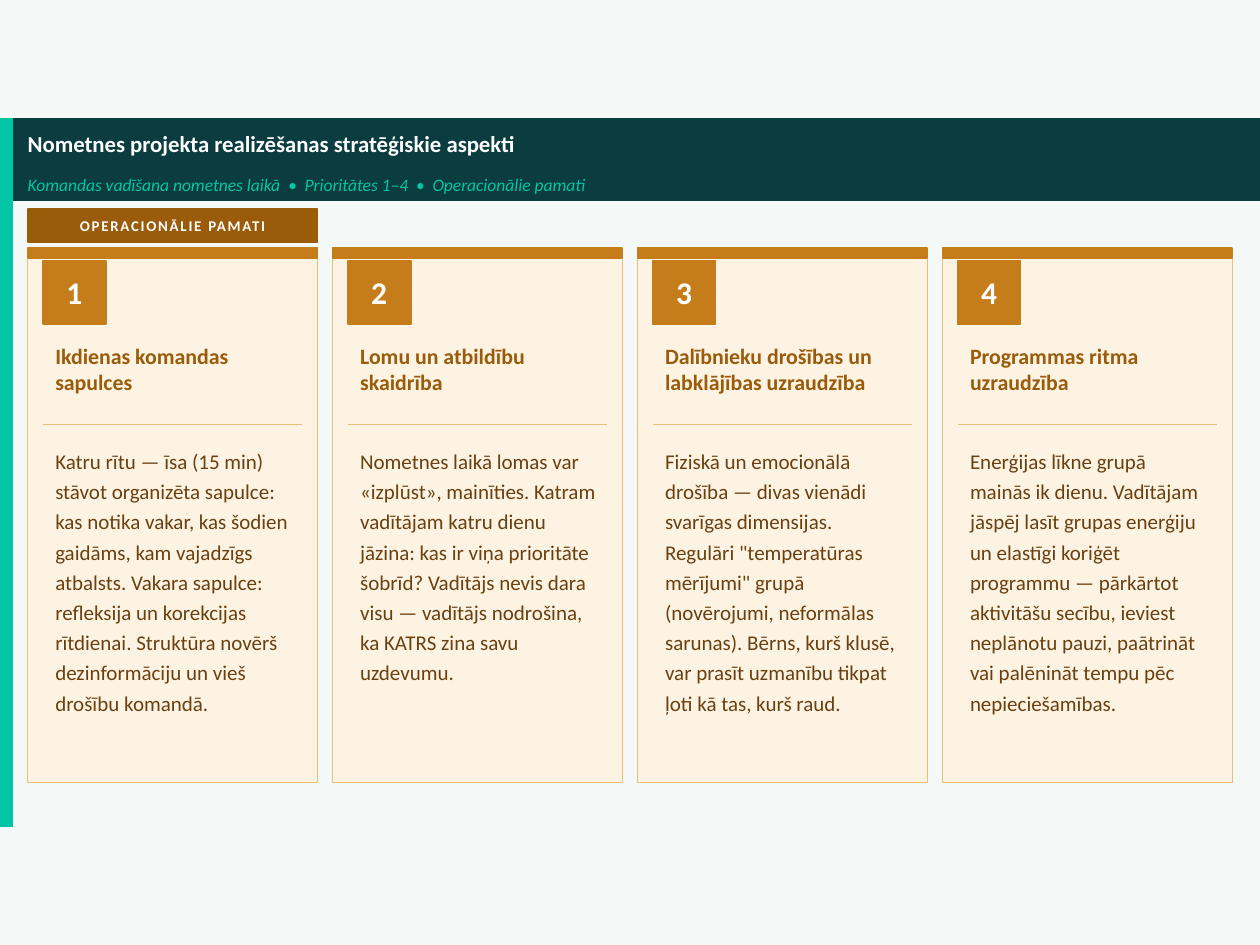
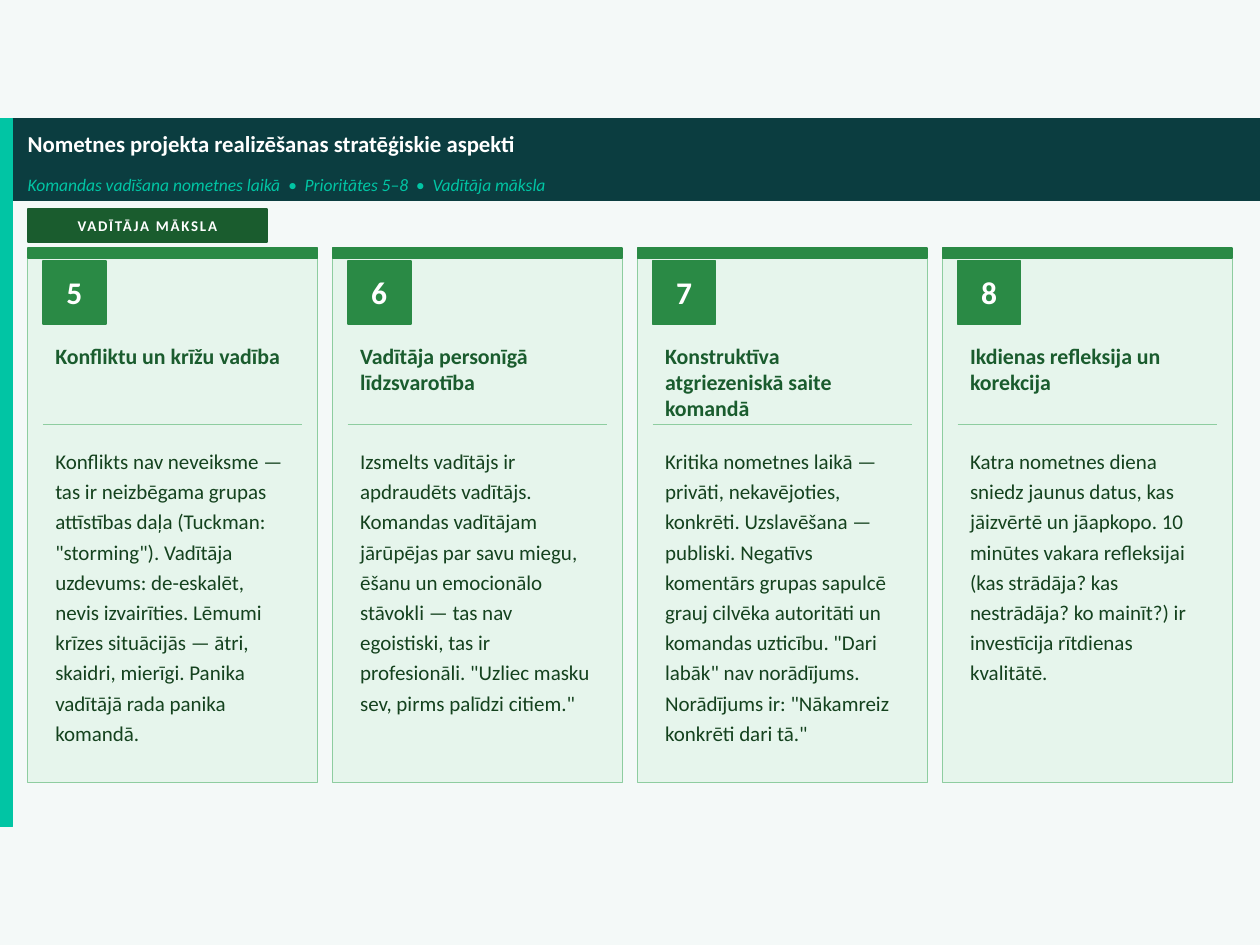
from dataclasses import dataclass

from lxml.etree import SubElement
from pptx import Presentation
from pptx.dml.color import RGBColor
from pptx.enum.shapes import MSO_CONNECTOR, MSO_SHAPE
from pptx.enum.text import MSO_ANCHOR as ANCHOR, MSO_AUTO_SIZE as AUTOFIT, PP_ALIGN as ALIGN
from pptx.oxml.ns import qn
from pptx.util import Emu, Pt

TITLE = "Nometnes projekta realizēšanas stratēģiskie aspekti"
TOPIC = "Komandas vadīšana nometnes laikā"

SECTIONS = [
    {
        "palette": "amber",
        "name": "Operacionālie pamati",
        "tag_width": 230,
        "first": 1,
        "priorities": [
            ("Ikdienas komandas sapulces",
             "Katru rītu — īsa (15 min) stāvot organizēta sapulce: kas notika vakar, "
             "kas šodien gaidāms, kam vajadzīgs atbalsts. Vakara sapulce: refleksija un "
             "korekcijas rītdienai. Struktūra novērš dezinformāciju un vieš drošību komandā."),
            ("Lomu un atbildību skaidrība",
             "Nometnes laikā lomas var «izplūst», mainīties. Katram vadītājam katru dienu "
             "jāzina: kas ir viņa prioritāte šobrīd? Vadītājs nevis dara visu — vadītājs "
             "nodrošina, ka KATRS zina savu uzdevumu."),
            ("Dalībnieku drošības un labklājības uzraudzība",
             "Fiziskā un emocionālā drošība — divas vienādi svarīgas dimensijas. Regulāri "
             '"temperatūras mērījumi" grupā (novērojumi, neformālas sarunas). Bērns, kurš '
             "klusē, var prasīt uzmanību tikpat ļoti kā tas, kurš raud."),
            ("Programmas ritma uzraudzība",
             "Enerģijas līkne grupā mainās ik dienu. Vadītājam jāspēj lasīt grupas enerģiju "
             "un elastīgi koriģēt programmu — pārkārtot aktivitāšu secību, ieviest "
             "neplānotu pauzi, paātrināt vai palēnināt tempu pēc nepieciešamības."),
        ],
    },
    {
        "palette": "green",
        "name": "Vadītāja māksla",
        "tag_width": 190,
        "first": 5,
        "priorities": [
            ("Konfliktu un krīžu vadība",
             "Konflikts nav neveiksme — tas ir neizbēgama grupas attīstības daļa (Tuckman: "
             '"storming"). Vadītāja uzdevums: de-eskalēt, nevis izvairīties. Lēmumi krīzes '
             "situācijās — ātri, skaidri, mierīgi. Panika vadītājā rada panika komandā."),
            ("Vadītāja personīgā līdzsvarotība",
             "Izsmelts vadītājs ir apdraudēts vadītājs. Komandas vadītājam jārūpējas par "
             "savu miegu, ēšanu un emocionālo stāvokli — tas nav egoistiski, tas ir "
             'profesionāli. "Uzliec masku sev, pirms palīdzi citiem."'),
            ("Konstruktīva atgriezeniskā saite komandā",
             "Kritika nometnes laikā — privāti, nekavējoties, konkrēti. Uzslavēšana — "
             "publiski. Negatīvs komentārs grupas sapulcē grauj cilvēka autoritāti un "
             'komandas uzticību. "Dari labāk" nav norādījums. Norādījums ir: "Nākamreiz '
             'konkrēti dari tā."'),
            ("Ikdienas refleksija un korekcija",
             "Katra nometnes diena sniedz jaunus datus, kas jāizvērtē un jāapkopo. 10 "
             "minūtes vakara refleksijai (kas strādāja? kas nestrādāja? ko mainīt?) ir "
             "investīcija rītdienas kvalitātē."),
        ],
    },
]


@dataclass(frozen=True)
class Palette:
    dark: str
    accent: str
    card: str
    rule: str
    text: str


@dataclass(frozen=True)
class Theme:
    font = "Calibri"
    page, band, teal, white = "F4F9F8", "0B3D40", "01C5A4", "FFFFFF"
    title, subtitle, tag, number, heading, body = 13, 10, 8.5, 18, 12.5, 12
    palettes = {
        "amber": Palette("9A5B0A", "C47D1A", "FDF3E3", "E8C07A", "6B4010"),
        "green": Palette("1A5C2E", "2A8A45", "E6F5EC", "8ECDA0", "14421E"),
    }


THEME = Theme()
PX = 9144  # EMU in one px, 100 px to the inch
SLIDE_WIDTH, SLIDE_HEIGHT = 1000, 750
BAND_TOP, LEFT = 94, 22
CARD_TOP, CARD_WIDTH, CARD_HEIGHT, CARD_GAP = 197, 230, 424, 12
PADDING = 12


def px(*lengths):
    return [Emu(length * PX) for length in lengths]


def rgb(code):
    return RGBColor.from_string(code)


def add_rect(slide, box, fill, border=None, border_width=1):
    rect = slide.shapes.add_shape(MSO_SHAPE.RECTANGLE, *px(*box))
    rect.shadow.inherit = False
    rect.fill.solid()
    rect.fill.fore_color.rgb = rgb(fill)
    rect.line.color.rgb = rgb(border or fill)
    rect.line.width = Pt(border_width)
    return rect


def write(shape, text, size, color, bold=False, italic=False, align=ALIGN.LEFT,
          anchor=ANCHOR.MIDDLE, inset=(0, 0), spacing=1.0):
    frame = shape.text_frame
    frame.word_wrap = True
    frame.auto_size = AUTOFIT.NONE
    frame.vertical_anchor = anchor
    frame.margin_left, frame.margin_top = px(*inset)
    frame.margin_right, frame.margin_bottom = px(*inset)
    frame.text = text
    paragraph = frame.paragraphs[0]
    paragraph.alignment = align
    paragraph.line_spacing = spacing
    paragraph.space_before = Pt(0)
    font = paragraph.font
    font.name, font.size = THEME.font, Pt(size)
    font.bold, font.italic = bold, italic
    font.color.rgb = rgb(color)


def place_on_top(placeholder, box):
    placeholder.left, placeholder.top, placeholder.width, placeholder.height = px(*box)
    placeholder.element.getparent().append(placeholder.element)


def add_header(slide, section):
    add_rect(slide, (0, BAND_TOP, SLIDE_WIDTH, 65), THEME.band)
    add_rect(slide, (0, BAND_TOP, 10, 562), THEME.teal)

    title, subtitle = slide.placeholders
    place_on_top(title, (LEFT, BAND_TOP, 960, 40))
    write(title, TITLE, THEME.title, THEME.white, bold=True)

    first, last = section["first"], section["first"] + len(section["priorities"]) - 1
    place_on_top(subtitle, (LEFT, BAND_TOP + 40, 960, 25))
    write(subtitle, f"{TOPIC}  •  Prioritātes {first}–{last}  •  {section['name']}",
          THEME.subtitle, THEME.teal, italic=True)


def add_tag(slide, section, palette):
    tag = add_rect(slide, (LEFT, 166, section["tag_width"], 26), palette.dark)
    write(tag, section["name"].upper(), THEME.tag, THEME.white, bold=True, align=ALIGN.CENTER)
    for properties in tag.element.iter(qn("a:defRPr")):
        properties.set("spc", "100")


def add_rule(slide, left, top, width, color):
    rule = slide.shapes.add_connector(
        MSO_CONNECTOR.STRAIGHT, *px(left, top, left + width, top))
    rule.line.color.rgb = rgb(color)
    rule.line.width = Pt(0.5)
    SubElement(rule.element.spPr, qn("a:effectLst"))


def add_card(slide, left, number, heading, body, palette):
    add_rect(slide, (left, CARD_TOP, CARD_WIDTH, CARD_HEIGHT), palette.card, palette.rule, 0.6)
    add_rect(slide, (left, CARD_TOP, CARD_WIDTH, 8), palette.accent)

    inner = left + PADDING
    badge = add_rect(slide, (inner, CARD_TOP + 10, 50, 50), palette.accent)
    write(badge, str(number), THEME.number, THEME.white, bold=True, align=ALIGN.CENTER)

    text_width = CARD_WIDTH - 22
    heading_box = slide.shapes.add_textbox(*px(inner, CARD_TOP + 70, text_width, 65))
    write(heading_box, heading, THEME.heading, palette.dark, bold=True,
          anchor=ANCHOR.TOP, inset=(10, 5))
    add_rule(slide, inner, CARD_TOP + 140, CARD_WIDTH - 2 * PADDING, palette.rule)
    body_box = slide.shapes.add_textbox(*px(inner, CARD_TOP + 150, text_width, 265))
    write(body_box, body, THEME.body, palette.text,
          anchor=ANCHOR.TOP, inset=(10, 5), spacing=1.2)


def add_section(deck, section):
    slide = deck.slides.add_slide(deck.slide_layouts[0])
    palette = THEME.palettes[section["palette"]]
    add_header(slide, section)
    add_tag(slide, section, palette)
    for column, (heading, body) in enumerate(section["priorities"]):
        left = LEFT + column * (CARD_WIDTH + CARD_GAP)
        add_card(slide, left, section["first"] + column, heading, body, palette)


def main():
    deck = Presentation()
    deck.slide_width, deck.slide_height = px(SLIDE_WIDTH, SLIDE_HEIGHT)
    background = deck.slide_master.background.fill
    background.solid()
    background.fore_color.rgb = rgb(THEME.page)
    for section in SECTIONS:
        add_section(deck, section)
    deck.save("out.pptx")


if __name__ == "__main__":
    main()
